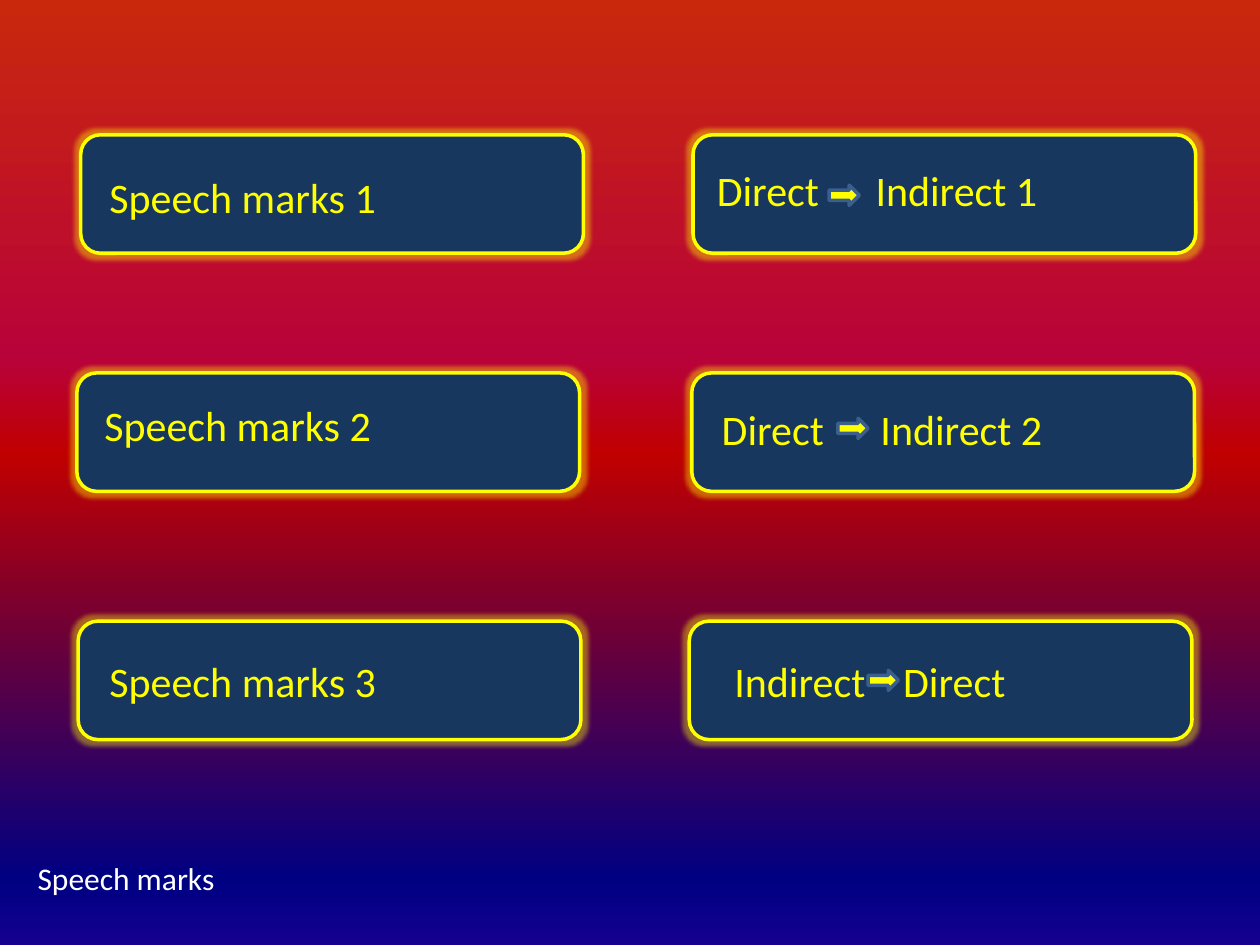
"""Build a menu slide of speech mark and reported speech exercises."""
from dataclasses import dataclass

from pptx import Presentation
from pptx.dml.color import RGBColor as RGB
from pptx.enum.shapes import MSO_SHAPE as Shape
from pptx.enum.text import MSO_AUTO_SIZE as Auto
from pptx.oxml.ns import qn
from pptx.util import Inches, Pt
from lxml.etree import SubElement as Sub


@dataclass(frozen=True)
class Theme:
    font: str = "Calibri"
    size: int = 24
    small: int = 18
    card: str = "17375E"
    glow: str = "FFFF00"
    edge: str = "3A5F8C"
    white: str = "FFFFFF"
    line: int = 2
    stops: tuple = ((0, "C9280D"), (38, "B8023A"), (48, "C00000"),
                    (93, "000082"), (100, "150090"))


THEME = Theme()
CARD = (3.99, 0.94)
ARROW = (0.24, 0.16)
CARDS = [
    {"at": (0.64, 1.07), "text": "Speech marks 1", "box": (0.77, 1.31, 3.36)},
    {"at": (0.61, 2.96), "text": "Speech marks 2", "box": (0.73, 3.12, 3.48)},
    {"at": (0.62, 4.93), "text": "Speech marks 3", "box": (0.77, 5.15, 3.28)},
    {"at": (5.5, 1.07), "text": "Direct\tIndirect 1", "box": (5.59, 1.26, 3.59),
     "tab": 1.26, "arrow": (6.58, 1.47)},
    {"at": (5.49, 2.96), "text": "Direct\tIndirect 2", "box": (5.63, 3.15, 3.54),
     "tab": 1.26, "arrow": (6.65, 3.32)},
    {"at": (5.47, 4.93), "text": "Indirect\tDirect", "box": (5.73, 5.15, 3.56),
     "tab": 1.34, "arrow": (6.89, 5.32)},
]
FOOT = {"text": "Speech marks", "box": (0.2, 6.77, 2.13)}


def paint(slide):
    fill = slide.background.fill
    fill.gradient()
    fill.gradient_angle = 270
    stops = next(slide.element.iter(qn("a:gsLst")))
    for old in list(stops):
        stops.remove(old)
    for pos, color in THEME.stops:
        stop = Sub(stops, qn("a:gs"), pos=str(pos * 1000))
        Sub(stop, qn("a:srgbClr"), val=color)


def add_form(slide, kind, at, size, fill, edge):
    form = slide.shapes.add_shape(kind, *map(Inches, at + size))
    form.shadow.inherit = False
    form.fill.solid()
    form.fill.fore_color.rgb = RGB.from_string(fill)
    form.line.color.rgb = RGB.from_string(edge)
    form.line.width = Pt(THEME.line)
    return form


def add_glow(form):
    effects = form.element.spPr.find(qn("a:effectLst"))
    glow = Sub(effects, qn("a:glow"), rad=str(Pt(5)))
    color = Sub(glow, qn("a:srgbClr"), val=THEME.glow)
    Sub(color, qn("a:alpha"), val="40000")


def add_label(slide, item, size, height, color):
    box = slide.shapes.add_textbox(*map(Inches, item["box"] + (height,)))
    frame = box.text_frame
    frame.word_wrap = True
    frame.auto_size = Auto.SHAPE_TO_FIT_TEXT
    para = frame.paragraphs[0]
    para.text = item["text"]
    para.font.name = THEME.font
    para.font.size = Pt(size)
    para.font.color.rgb = RGB.from_string(color)
    if "tab" in item:
        props = para.font._element.getparent()
        tabs = props.makeelement(qn("a:tabLst"), {})
        props.insert(0, tabs)
        Sub(tabs, qn("a:tab"), pos=str(Inches(item["tab"])), algn="l")


def main():
    deck = Presentation()
    deck.slide_width, deck.slide_height = Inches(10), Inches(7.5)
    slide = deck.slides.add_slide(deck.slide_layouts[6])
    paint(slide)
    for item in CARDS:
        add_glow(add_form(slide, Shape.ROUNDED_RECTANGLE, item["at"], CARD,
                          THEME.card, THEME.glow))
        add_label(slide, item, THEME.size, 0.5, THEME.glow)
        if "arrow" in item:
            add_form(slide, Shape.RIGHT_ARROW, item["arrow"], ARROW,
                     THEME.glow, THEME.edge)
    add_label(slide, FOOT, THEME.small, 0.4, THEME.white)
    deck.save("out.pptx")


if __name__ == "__main__":
    main()
